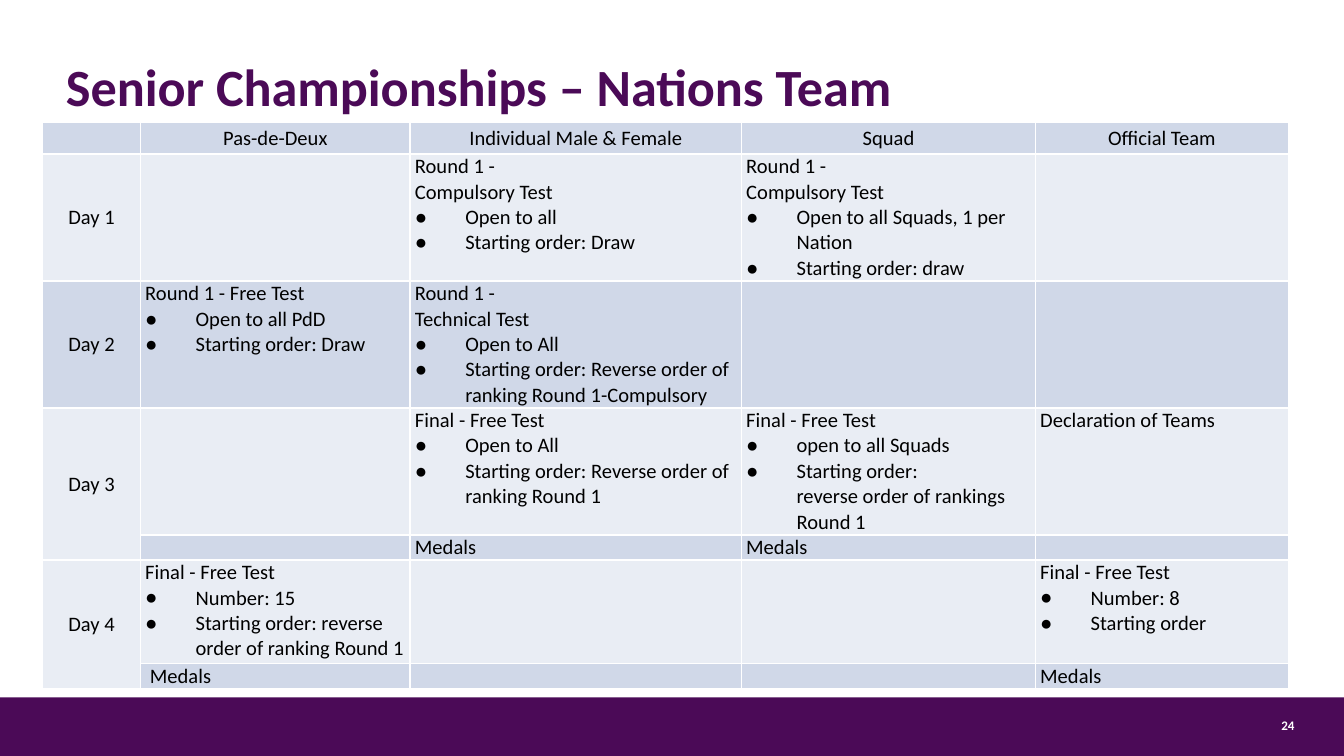
import pptx
import pptx.dml.color
import pptx.enum.shapes
import pptx.enum.text
import pptx.oxml
import pptx.oxml.ns
import pptx.util
from lxml import etree

Pt = pptx.util.Pt
ALIGN = pptx.enum.text.PP_ALIGN
ANCHOR = pptx.enum.text.MSO_ANCHOR
qn = pptx.oxml.ns.qn

COLORS = {"purple": "4B0A57", "white": "FFFFFF", "black": "000000",
          "dark_band": "D0D8E8", "light_band": "E9EDF4"}
FONT = "Calibri"
BULLET_FONT = "Arial"
TABLE_SIZE = 11
BULLET_INDENT = 27
CELL_MARGIN = 2.5

COLUMN_WIDTHS = [52.5, 144.5, 177.5, 157.5, 135.5]
ROW_HEIGHTS = [17, 68, 68, 68, 13.5, 55.5, 13.5]
ROW_BANDS = ["dark_band", "light_band", "dark_band", "light_band",
             "dark_band", "light_band", "dark_band"]
TWO_ROW_DAYS = [3, 5]

# Each cell lists its heading first and its bullet points after it.
EMPTY = []
MEDALS = ["Medals"]
SCHEDULE = [
    [EMPTY, ["Pas-de-Deux"], ["Individual Male & Female"], ["Squad"], ["Official Team"]],
    [["Day 1"], EMPTY,
     ["Round 1 -\nCompulsory Test", "Open to all", "Starting order: Draw"],
     ["Round 1 -\nCompulsory Test", "Open to all Squads, 1 per Nation",
      "Starting order: draw"],
     EMPTY],
    [["Day 2"],
     ["Round 1 - Free Test", "Open to all PdD", "Starting order: Draw"],
     ["Round 1 -\nTechnical Test", "Open to All",
      "Starting order: Reverse order of ranking Round 1-Compulsory"],
     EMPTY, EMPTY],
    [["Day 3"], EMPTY,
     ["Final - Free Test", "Open to All",
      "Starting order: Reverse order of ranking Round 1"],
     ["Final - Free Test", "open to all Squads",
      "Starting order:\nreverse order of rankings Round 1"],
     ["Declaration of Teams"]],
    [EMPTY, EMPTY, MEDALS, MEDALS, EMPTY],
    [["Day 4"],
     ["Final - Free Test", "Number: 15",
      "Starting order: reverse order of ranking Round 1"],
     EMPTY, EMPTY,
     ["Final - Free Test", "Number: 8", "Starting order"]],
    [EMPTY, MEDALS, EMPTY, EMPTY, MEDALS],
]


def rgb(name):
    return pptx.dml.color.RGBColor.from_string(COLORS[name])


def apply(target, values):
    for attribute, value in values.items():
        setattr(target, attribute, value)


def format_runs(paragraph, size, color, bold=False):
    for run in paragraph.runs:
        apply(run.font, {"name": FONT, "size": Pt(size), "bold": bold})
        run.font.color.rgb = rgb(color)


def add_title(slide, left, top, width, height):
    title = slide.shapes.title
    apply(title, {"left": Pt(left), "top": Pt(top),
                  "width": Pt(width), "height": Pt(height)})
    apply(title.text_frame, {
        "margin_left": 0, "margin_right": 0, "margin_top": Pt(3.6),
        "margin_bottom": Pt(3.6), "vertical_anchor": ANCHOR.TOP,
        "word_wrap": True, "auto_size": pptx.enum.text.MSO_AUTO_SIZE.NONE})
    heading = title.text_frame.paragraphs[0]
    heading.text = "Senior Championships – Nations Team"
    apply(heading, {"alignment": ALIGN.LEFT, "line_spacing": Pt(34),
                    "space_before": Pt(0)})
    format_runs(heading, 28, "purple", bold=True)


def add_footer(slide, left, top, width, height):
    bar = slide.shapes.add_shape(pptx.enum.shapes.MSO_SHAPE.RECTANGLE,
                                 Pt(left), Pt(top), Pt(width), Pt(height))
    bar.shadow.inherit = False
    bar.fill.solid()
    bar.fill.fore_color.rgb = rgb("purple")
    bar.line.fill.background()

    number = slide.shapes.add_textbox(Pt(left + width - 36.5), Pt(top + 7.2),
                                      Pt(13), Pt(16.5))
    apply(number.text_frame, {"margin_left": 0, "margin_right": 0,
                              "margin_top": Pt(3.6), "margin_bottom": Pt(3.6),
                              "word_wrap": True})
    page = number.text_frame.paragraphs[0]
    page.text = "24"
    page.alignment = ALIGN.CENTER
    format_runs(page, 7, "white", bold=True)


def add_borders(cell):
    properties = cell._tc.get_or_add_tcPr()
    for side in ("lnL", "lnR", "lnT", "lnB"):
        line = etree.SubElement(properties, qn(f"a:{side}"), w=str(Pt(1)))
        fill = etree.SubElement(line, qn("a:solidFill"))
        etree.SubElement(fill, qn("a:srgbClr"), val=COLORS["white"])


def add_bullet(paragraph):
    properties = paragraph._p.get_or_add_pPr()
    properties.set("marL", str(Pt(BULLET_INDENT)))
    properties.set("indent", str(-Pt(BULLET_INDENT)))
    etree.SubElement(properties, qn("a:buFont"), typeface=BULLET_FONT)
    etree.SubElement(properties, qn("a:buChar"), char="●")


def fill_cell(cell, lines, band, is_label):
    add_borders(cell)
    cell.fill.solid()
    cell.fill.fore_color.rgb = rgb(band)
    apply(cell, {"margin_left": Pt(CELL_MARGIN), "margin_right": Pt(CELL_MARGIN),
                 "margin_top": 0, "margin_bottom": 0,
                 "vertical_anchor": ANCHOR.MIDDLE if is_label else ANCHOR.TOP})
    frame = cell.text_frame
    if not lines:
        # An empty cell must not force its row to the default text height.
        etree.SubElement(frame.paragraphs[0]._p, qn("a:endParaRPr"),
                         sz=str(TABLE_SIZE * 100))
    for index, line in enumerate(lines):
        paragraph = frame.add_paragraph() if index else frame.paragraphs[0]
        paragraph.text = line
        if index:
            add_bullet(paragraph)
        paragraph.alignment = ALIGN.CENTER if is_label else ALIGN.LEFT
        format_runs(paragraph, TABLE_SIZE, "black")


def add_schedule(slide, left, top):
    frame = slide.shapes.add_table(
        len(ROW_HEIGHTS), len(COLUMN_WIDTHS), Pt(left), Pt(top),
        Pt(sum(COLUMN_WIDTHS)), Pt(sum(ROW_HEIGHTS)))
    table = frame.table
    apply(table, {"first_row": False, "horz_banding": False})
    for column, width in zip(table.columns, COLUMN_WIDTHS):
        column.width = Pt(width)
    for row, height in zip(table.rows, ROW_HEIGHTS):
        row.height = Pt(height)

    for r, (entries, band) in enumerate(zip(SCHEDULE, ROW_BANDS)):
        for c, lines in enumerate(entries):
            fill_cell(table.cell(r, c), lines, band, is_label=r == 0 or c == 0)
    for r in TWO_ROW_DAYS:
        table.cell(r, 0).merge(table.cell(r + 1, 0))
    table.cell(6, 1).margin_left = Pt(2 * CELL_MARGIN)


def main():
    presentation = pptx.Presentation()
    apply(presentation, {"slide_width": Pt(720), "slide_height": Pt(405)})
    slide = presentation.slides.add_slide(presentation.slide_layouts[5])
    add_footer(slide, 0, 373.7, 720, 31.3)
    add_title(slide, 35.3, 25.2, 606, 40.3)
    add_schedule(slide, 22.8, 65.6)
    presentation.save("out.pptx")


if __name__ == "__main__":
    main()
